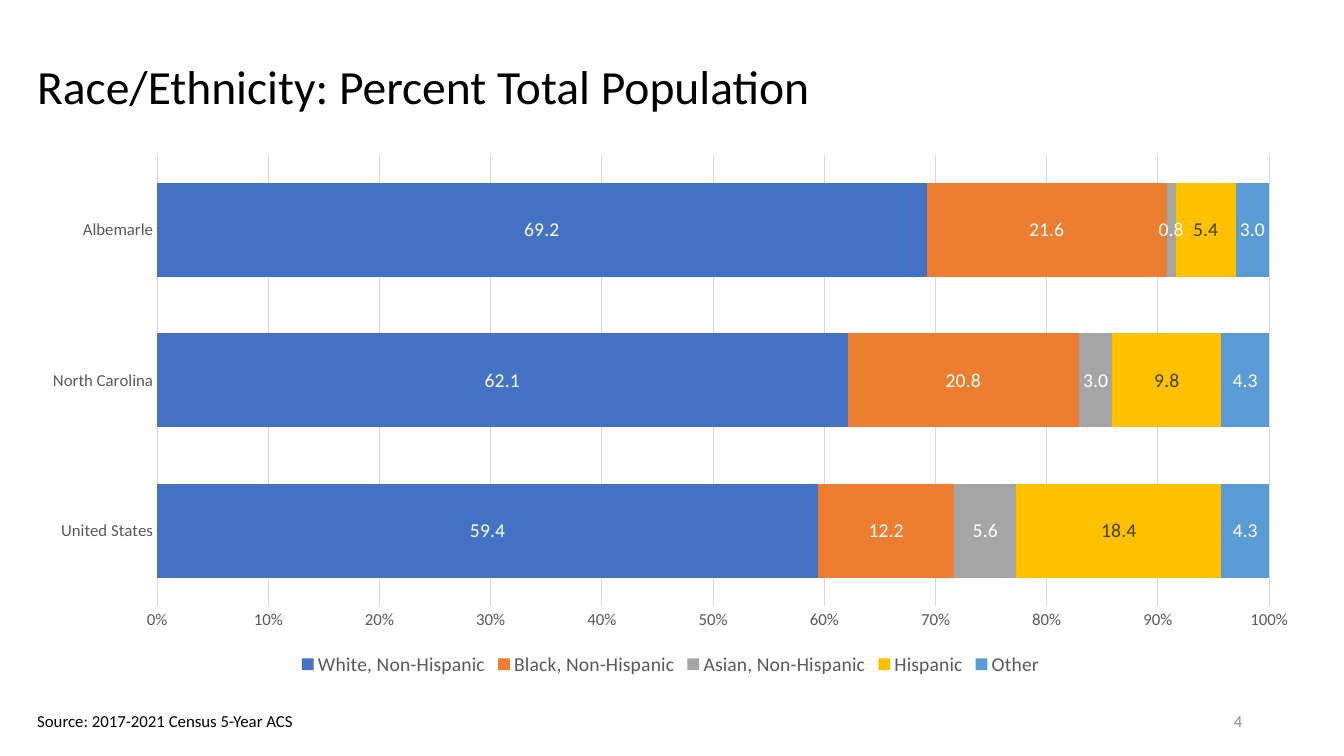
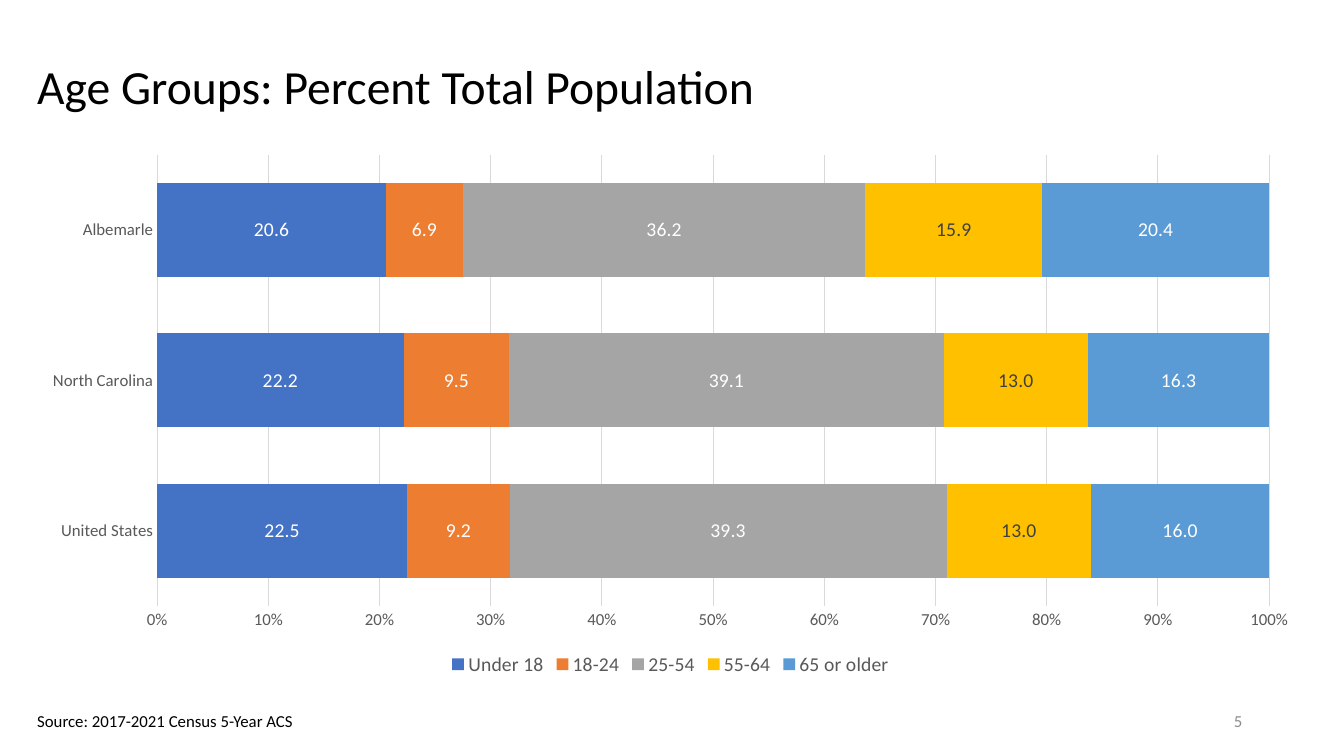
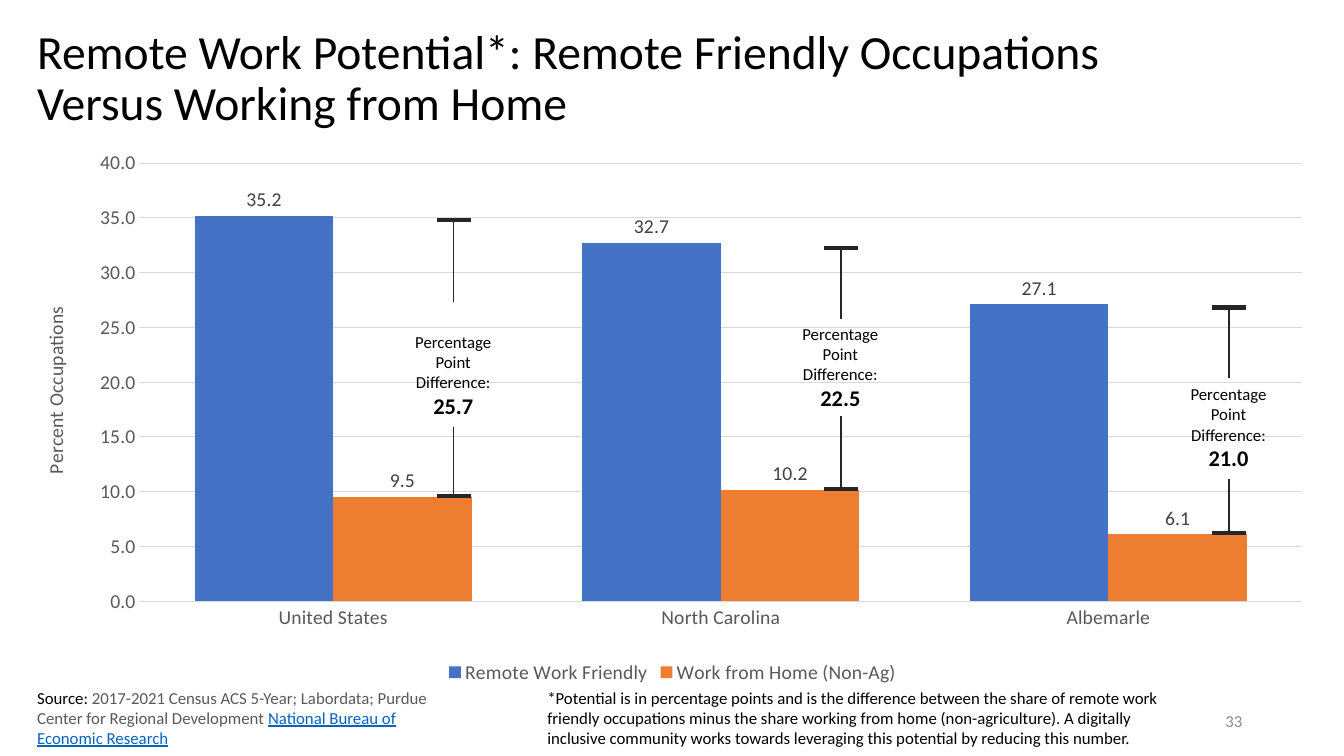
"""Build three slides of population and remote work charts."""
import pptx
import pptx.chart.data
import pptx.dml.color
import pptx.enum.chart
import pptx.enum.shapes
import pptx.enum.text
import pptx.oxml
import pptx.oxml.ns
import pptx.util

FONT = "Calibri"
BLACK, DARK, GRAY, LIGHT, WHITE = "000000", "404040", "595959", "D9D9D9", "FFFFFF"
PAGE_GRAY, LINK, MARK = "8C8C8C", "0563C1", "262626"
ACCENTS = ["4472C4", "ED7D31", "A5A5A5", "FFC000", "5B9BD5"]
STACK_LABELS = [WHITE, WHITE, WHITE, DARK, WHITE]
LEFT, WIDTH = 27, 1276
TITLE_BOX = (LEFT, 34, WIDTH, 109)
TALL_TITLE_BOX = (LEFT, 15, WIDTH, 128)
PLACES = ["United States", "North Carolina", "Albemarle"]
SOURCE = "Source: 2017-2021 Census 5-Year ACS"

STACKED_SLIDES = [
    ("Race/Ethnicity: Percent Total Population", 4, [
        ("White, Non-Hispanic", (59.4, 62.1, 69.2)),
        ("Black, Non-Hispanic", (12.2, 20.8, 21.6)),
        ("Asian, Non-Hispanic", (5.6, 3.0, 0.8)),
        ("Hispanic", (18.4, 9.8, 5.4)),
        ("Other", (4.3, 4.3, 3.0)),
    ]),
    ("Age Groups: Percent Total Population", 5, [
        ("Under 18", (22.5, 22.2, 20.6)),
        ("18-24", (9.2, 9.5, 6.9)),
        ("25-54", (39.3, 39.1, 36.2)),
        ("55-64", (13.0, 13.0, 15.9)),
        ("65 or older", (16.0, 16.3, 20.4)),
    ]),
]

REMOTE_TITLE = "Remote Work Potential*: Remote Friendly Occupations\nVersus Working from Home"
REMOTE_SERIES = [
    ("Remote Work Friendly", (35.2, 32.7, 27.1)),
    ("Work from Home (Non-Ag)", (9.5, 10.2, 6.1)),
]
REMOTE_PLOT = {"x": 0.087, "y": 0.035, "w": 0.901, "h": 0.805}
REMOTE_SOURCE = [[
    ("Source: ", {}),
    ("2017-2021 Census ACS 5-Year; Labordata; Purdue Center for Regional Development ",
     {"color": GRAY}),
    ("National Bureau of Economic Research", {"color": LINK, "underline": True}),
]]
REMOTE_NOTE = (
    "*Potential is in percentage points and is the difference between the share of remote work "
    "friendly occupations minus the share working from home (non-agriculture). A digitally "
    "inclusive community works towards leveraging this potential by reducing this number."
)
GAPS = [
    {"value": "25.7", "x": 450, "top": 218, "upper_end": 300, "text": 324,
     "lower_start": 424, "bottom": 492},
    {"value": "22.5", "x": 834, "top": 246, "upper_end": 316, "text": 316,
     "lower_start": 413, "bottom": 485},
    {"value": "21.0", "x": 1219, "top": 305, "upper_end": 375, "text": 376,
     "lower_start": 475, "bottom": 529},
]
CAP_HALF = 17

ALIGN = pptx.enum.text.PP_ALIGN
ANCHOR = pptx.enum.text.MSO_ANCHOR
AUTO = pptx.enum.text.MSO_AUTO_SIZE
XL = pptx.enum.chart


def px(n):
    return pptx.util.Emu(n * 9144)


def rgb(value):
    return pptx.dml.color.RGBColor.from_string(value)


def set_font(font, size=12, color=BLACK, bold=False, underline=False):
    font.name, font.size = FONT, pptx.util.Pt(size)
    font.bold, font.underline = bold, underline
    font.color.rgb = rgb(color)


def add_text(slide, box, text, align=ALIGN.LEFT, anchor=ANCHOR.TOP, spacing=None,
             wrap=True, grow=False, **style):
    tf = slide.shapes.add_textbox(*map(px, box)).text_frame
    tf.word_wrap, tf.vertical_anchor = wrap, anchor
    tf.auto_size = AUTO.SHAPE_TO_FIT_TEXT if grow else AUTO.NONE
    paragraphs = [[(text, {})]] if isinstance(text, str) else text
    for i, runs in enumerate(paragraphs):
        p = tf.add_paragraph() if i else tf.paragraphs[0]
        p.alignment, p.line_spacing = align, spacing
        for run_text, extra in runs:
            for j, line in enumerate(run_text.split("\n")):
                if j:
                    p.add_line_break()
                if line:
                    r = p.add_run()
                    r.text = line
                    set_font(r.font, **{**style, **extra})


def add_rule(slide, x1, y1, x2, y2, weight):
    line = slide.shapes.add_connector(
        pptx.enum.shapes.MSO_CONNECTOR.STRAIGHT, *map(px, (x1, y1, x2, y2)))
    line.line.color.rgb = rgb(MARK)
    line.line.width = pptx.util.Pt(weight)
    line._element.spPr.append(pptx.oxml.parse_xml(
        f"<a:effectLst {pptx.oxml.ns.nsdecls('a')}/>"))


def add_bars(slide, kind, box, series, label_colors, gap, axis_size, axis_format,
             label_format, overlap=0, label_position=None):
    data = pptx.chart.data.CategoryChartData()
    data.categories = PLACES
    for name, values in series:
        data.add_series(name, values)
    chart = slide.shapes.add_chart(kind, *map(px, box), data).chart
    set_font(chart.font)
    chart.has_title = False
    chart.has_legend = True
    chart.legend.position = XL.XL_LEGEND_POSITION.BOTTOM
    chart.legend.include_in_layout = False
    set_font(chart.legend.font, 14, GRAY)
    plot = chart.plots[0]
    plot.gap_width, plot.overlap, plot.vary_by_categories = gap, overlap, False
    for s, fill, color in zip(plot.series, ACCENTS, label_colors):
        s.format.fill.solid()
        s.format.fill.fore_color.rgb = rgb(fill)
        s.invert_if_negative = False
        labels = s.data_labels
        labels.show_value = True
        labels.number_format, labels.number_format_is_linked = label_format, False
        set_font(labels.font, 14, color)
        if label_position is not None:
            labels.position = label_position
    cat_axis, val_axis = chart.category_axis, chart.value_axis
    for axis in (cat_axis, val_axis):
        axis.major_tick_mark = axis.minor_tick_mark = XL.XL_TICK_MARK.NONE
        set_font(axis.tick_labels.font, axis_size, GRAY)
    val_axis.tick_labels.number_format = axis_format
    val_axis.tick_labels.number_format_is_linked = False
    val_axis.format.line.fill.background()
    for line in (cat_axis.format.line, val_axis.major_gridlines.format.line):
        line.color.rgb = rgb(LIGHT)
        line.width = pptx.util.Pt(0.75)
    return chart


def place_plot(chart, layout):
    area = chart._chartSpace.chart.plotArea
    for old in area.findall(pptx.oxml.ns.qn("c:layout")):
        area.remove(old)
    modes = "".join(f'<c:{k}Mode val="edge"/>' for k in "xy")
    sizes = "".join(f'<c:{k} val="{v}"/>' for k, v in layout.items())
    area.insert(0, pptx.oxml.parse_xml(
        f"<c:layout {pptx.oxml.ns.nsdecls('c')}><c:manualLayout>"
        f'<c:layoutTarget val="inner"/>{modes}{sizes}</c:manualLayout></c:layout>'))


def add_slide(prs, title, number, title_box=TITLE_BOX):
    slide = prs.slides.add_slide(prs.slide_layouts[6])
    add_text(slide, title_box, title, size=34, anchor=ANCHOR.MIDDLE, spacing=0.9)
    add_text(slide, (942, 695, 300, 40), str(number), color=PAGE_GRAY,
             align=ALIGN.RIGHT, anchor=ANCHOR.MIDDLE)
    return slide


def add_stacked_slide(prs, title, number, series):
    slide = add_slide(prs, title, number)
    add_bars(slide, XL.XL_CHART_TYPE.BAR_STACKED_100, (LEFT, 143, WIDTH, 532), series,
             STACK_LABELS, gap=60, overlap=100, axis_size=12, axis_format="0%",
             label_format="#,##0.0")
    add_text(slide, (LEFT, 700, 278, 30), SOURCE, wrap=False, grow=True)


def add_gap_mark(slide, gap):
    x = gap["x"]
    add_text(slide, (x - 66, gap["text"], 131, 98),
             [[("Percentage\nPoint", {})],
              [("Difference:\n", {}), (gap["value"], {"size": 16, "bold": True})]],
             align=ALIGN.CENTER, grow=True)
    for y in (gap["top"], gap["bottom"]):
        add_rule(slide, x - CAP_HALF, y, x + CAP_HALF, y, 3)
    add_rule(slide, x, gap["top"], x, gap["upper_end"], 1)
    add_rule(slide, x, gap["lower_start"], x, gap["bottom"], 1)


def add_remote_slide(prs):
    slide = add_slide(prs, REMOTE_TITLE, 33, TALL_TITLE_BOX)
    chart = add_bars(slide, XL.XL_CHART_TYPE.COLUMN_CLUSTERED, (LEFT, 143, 1280, 540),
                     REMOTE_SERIES, [DARK, DARK], gap=80, axis_size=14, axis_format="0.0",
                     label_format="0.0",
                     label_position=XL.XL_LABEL_POSITION.OUTSIDE_END)
    place_plot(chart, REMOTE_PLOT)
    axis = chart.value_axis
    axis.minimum_scale, axis.maximum_scale, axis.major_unit = 0, 40, 5
    p = axis.axis_title.text_frame.paragraphs[0]
    r = p.add_run()
    r.text = "Percent Occupations"
    set_font(r.font, 14, GRAY)
    for gap in GAPS:
        add_gap_mark(slide, gap)
    add_text(slide, (LEFT, 677, 440, 71), REMOTE_SOURCE, grow=True)
    add_text(slide, (533, 677, 654, 71), REMOTE_NOTE, grow=True)


def main():
    prs = pptx.Presentation()
    prs.slide_width, prs.slide_height = px(1333), px(750)
    for title, number, series in STACKED_SLIDES:
        add_stacked_slide(prs, title, number, series)
    add_remote_slide(prs)
    prs.save("out.pptx")


if __name__ == "__main__":
    main()
